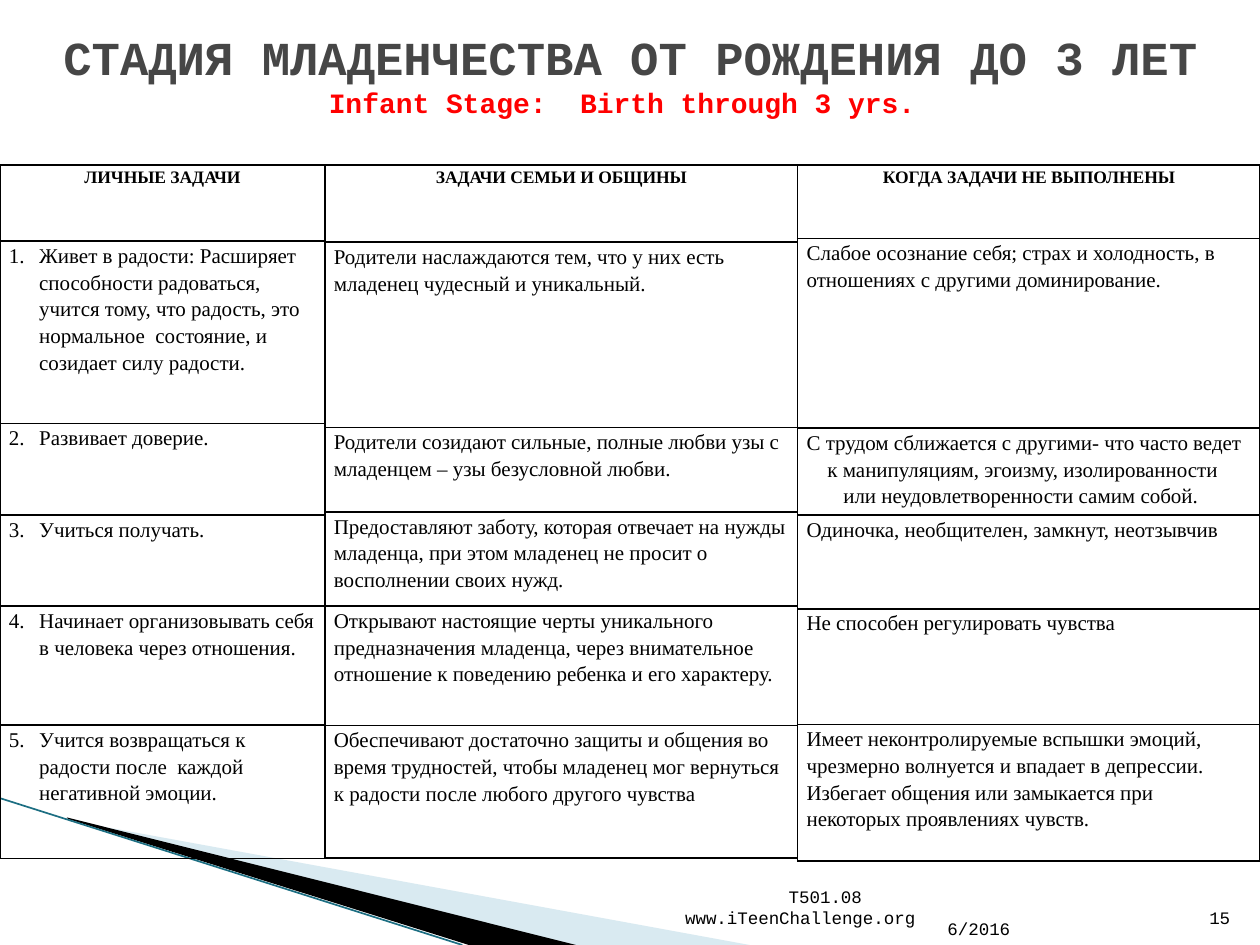
import pptx
import pptx.util
import pptx.dml.color
import pptx.enum.text
import pptx.enum.shapes
import pptx.oxml
import pptx.oxml.ns

Cm, Pt = pptx.util.Cm, pptx.util.Pt
ALIGN = pptx.enum.text.PP_ALIGN
ANCHOR = pptx.enum.text.MSO_ANCHOR

# ---- Content ----
TITLE = [("СТАДИЯ МЛАДЕНЧЕСТВА ОТ РОЖДЕНИЯ ДО 3 ЛЕТ\v", "title", "title"),
         ("Infant Stage:  Birth through 3 yrs. ", "subtitle", "accent")]

PERSONAL = ["ЛИЧНЫЕ ЗАДАЧИ",
            "1. \tЖивет в радости: Расширяет способности радоваться, учится тому, что радость, "
            "это нормальное  состояние, и созидает силу радости.",
            "2. \tРазвивает доверие.",
            "3. \tУчиться получать.",
            "4. \tНачинает организовывать себя в человека через отношения.",
            "5. \tУчится возвращаться к радости после  каждой негативной эмоции."]
FAMILY = ["ЗАДАЧИ СЕМЬИ И ОБЩИНЫ",
          "Родители наслаждаются тем, что у них есть младенец чудесный и уникальный.",
          "Родители созидают сильные, полные любви узы с младенцем – узы безусловной любви.",
          "Предоставляют заботу, которая отвечает на нужды младенца, при этом младенец "
          "не просит о восполнении своих нужд.",
          "Открывают настоящие черты уникального предназначения младенца, через "
          "внимательное отношение к поведению ребенка и его характеру.",
          "Обеспечивают достаточно защиты и общения во время трудностей, чтобы младенец "
          "мог вернуться к радости после любого другого чувства"]
# A list inside a column holds (line, left indent in cm) pairs
FAILURES = ["КОГДА ЗАДАЧИ НЕ ВЫПОЛНЕНЫ",
            "Слабое осознание себя; страх и холодность, в отношениях с другими доминирование.",
            [("С трудом сближается с другими- что часто ведет", 0),
             ("к манипуляциям, эгоизму, изолированности", 0.42),
             ("или неудовлетворенности самим собой.", 0.74)],
            "Одиночка, необщителен, замкнут, неотзывчив",
            "Не способен регулировать чувства",
            "Имеет неконтролируемые вспышки эмоций, чрезмерно волнуется и впадает в депрессии. "
            "Избегает общения или замыкается при некоторых проявлениях чувств."]

# (texts, width, row heights, hanging indent), in cm
COLUMNS = [(PERSONAL, 6.55, [1.53, 3.68, 1.84, 1.84, 2.4, 2.69], 0.61),
           (FAMILY, 9.53, [1.55, 3.74, 1.7, 1.9, 2.41, 2.67], 0),
           (FAILURES, 9.32, [1.48, 3.82, 1.7, 1.89, 2.33, 2.75], 0)]
TABLE_TOP = 3.33

# (outline points in cm, colour, opacity in percent)
SWOOSHES = [([(1.4, 16.54), (15.11, 19.05), (11.58, 19.05), (1.4, 16.51)], "pale", 40),
            ([(1.35, 16.48), (11.61, 19.05), (9.45, 19.05), (1.37, 16.51)], "text", 100)]
SWOOSH_EDGE = (0, 16.09, 9.32, 19.05)

THEME = {
    "font": {"mono": "Courier New", "serif": "Times New Roman"},
    "size": {"title": 27, "subtitle": 16, "body": 12, "header": 10, "footer": 10},
    "color": {"title": "464646", "accent": "FF0000", "text": "000000",
              "pale": "A0CBDC", "edge": "1C6E82"},
}


def rgb(name):
    return pptx.dml.color.RGBColor.from_string(THEME["color"][name])


def write(frame, text, size="body", color="text", font="serif", bold=False, align=ALIGN.LEFT,
          indent=0, hanging=0, spacing=None, after=0, new=False):
    """Write one paragraph; text is a string or a list of (text, size, colour) runs."""
    paragraph = frame.add_paragraph() if new else frame.paragraphs[0]
    paragraph.alignment = align
    paragraph.space_after = Pt(after)
    if spacing:
        paragraph.line_spacing = spacing
    if indent or hanging:
        properties = paragraph._p.get_or_add_pPr()
        properties.set("marL", str(Cm(indent + hanging)))
        properties.set("indent", str(-Cm(hanging)))
    for words, run_size, run_color in [(text, size, color)] if isinstance(text, str) else text:
        start = len(paragraph.runs)
        for number, line in enumerate(words.split("\v")):
            if number:
                paragraph.add_line_break()
            if line:
                paragraph.add_run().text = line
        for run in paragraph.runs[start:]:
            run.font.name = THEME["font"][font]
            run.font.size = Pt(THEME["size"][run_size])
            run.font.bold = bold
            run.font.color.rgb = rgb(run_color)


def add_box(slide, left, top, width, height, anchor):
    frame = slide.shapes.add_textbox(Cm(left), Cm(top), Cm(width), Cm(height)).text_frame
    frame.word_wrap = True
    frame.vertical_anchor = anchor
    return frame


def style_cell(cell):
    properties = cell._tc.get_or_add_tcPr()
    for side in ("lnL", "lnR", "lnT", "lnB"):
        properties.append(pptx.oxml.parse_xml(
            f'<a:{side} {pptx.oxml.ns.nsdecls("a")} w="{Pt(1)}"><a:solidFill>'
            f'<a:srgbClr val="{THEME["color"]["text"]}"/></a:solidFill></a:{side}>'))
    cell.fill.background()
    cell.margin_left = cell.margin_right = Cm(0.18)
    cell.margin_top = cell.margin_bottom = 0


def add_column(slide, left, texts, width, heights, hanging):
    table = slide.shapes.add_table(len(texts), 1, Cm(left), Cm(TABLE_TOP),
                                   Cm(width), Cm(sum(heights))).table
    table.horz_banding = False
    table.columns[0].width = Cm(width)
    for row, (text, height) in enumerate(zip(texts, heights)):
        table.rows[row].height = Cm(height)
        cell = table.cell(row, 0)
        style_cell(cell)
        if row == 0:
            write(cell.text_frame, text, size="header", bold=True,
                  align=ALIGN.CENTER, spacing=1.15)
            continue
        lines = [(text, 0)] if isinstance(text, str) else text
        for number, (line, indent) in enumerate(lines):
            write(cell.text_frame, line, indent=indent, hanging=hanging, spacing=1.15,
                  after=4 if number == len(lines) - 1 else 0, new=number > 0)


def add_swoosh(slide, points, color, opacity):
    corners = [(Cm(x), Cm(y)) for x, y in points]
    builder = slide.shapes.build_freeform(*corners[0], scale=1.0)
    builder.add_line_segments(corners[1:], close=True)
    swoosh = builder.convert_to_shape()
    swoosh.shadow.inherit = False
    swoosh.line.fill.background()
    swoosh.fill.solid()
    swoosh.fill.fore_color.rgb = rgb(color)
    if opacity < 100:
        tint = swoosh._element.spPr.find(".//" + pptx.oxml.ns.qn("a:srgbClr"))
        tint.append(pptx.oxml.parse_xml(
            f'<a:alpha {pptx.oxml.ns.nsdecls("a")} val="{opacity * 1000}"/>'))


def main():
    deck = pptx.Presentation()
    deck.slide_width, deck.slide_height = Cm(25.4), Cm(19.05)
    slide = deck.slides.add_slide(deck.slide_layouts[6])

    # Corner decoration
    for swoosh in SWOOSHES:
        add_swoosh(slide, *swoosh)
    edge = slide.shapes.add_connector(pptx.enum.shapes.MSO_CONNECTOR.STRAIGHT,
                                      *[Cm(value) for value in SWOOSH_EDGE])
    edge.line.color.rgb = rgb("edge")
    edge.line.width = Pt(0.95)
    edge._element.spPr.append(
        pptx.oxml.parse_xml(f'<a:effectLst {pptx.oxml.ns.nsdecls("a")}/>'))

    # Footer: date, course and site, page number
    footer = {"size": "footer", "font": "mono"}
    date = add_box(slide, 18.85, 18.03, 5.33, 1.02, ANCHOR.BOTTOM)
    write(date, "6/2016", **footer)
    course = add_box(slide, 12.17, 17.81, 6.53, 1.02, ANCHOR.BOTTOM)
    write(course, "T501.08", indent=3.48, **footer)
    write(course, "www.iTeenChallenge.org", align=ALIGN.RIGHT, new=True, **footer)
    page = add_box(slide, 24.03, 17.81, 1.02, 1.02, ANCHOR.BOTTOM)
    write(page, "15", align=ALIGN.RIGHT, **footer)

    # Title
    title = add_box(slide, 0.43, 0, 24.56, 2.97, ANCHOR.MIDDLE)
    write(title, TITLE, font="mono", bold=True, align=ALIGN.CENTER)

    # Three task tables side by side
    left = 0
    for texts, width, heights, hanging in COLUMNS:
        add_column(slide, left, texts, width, heights, hanging)
        left += width

    deck.save("out.pptx")


if __name__ == "__main__":
    main()
